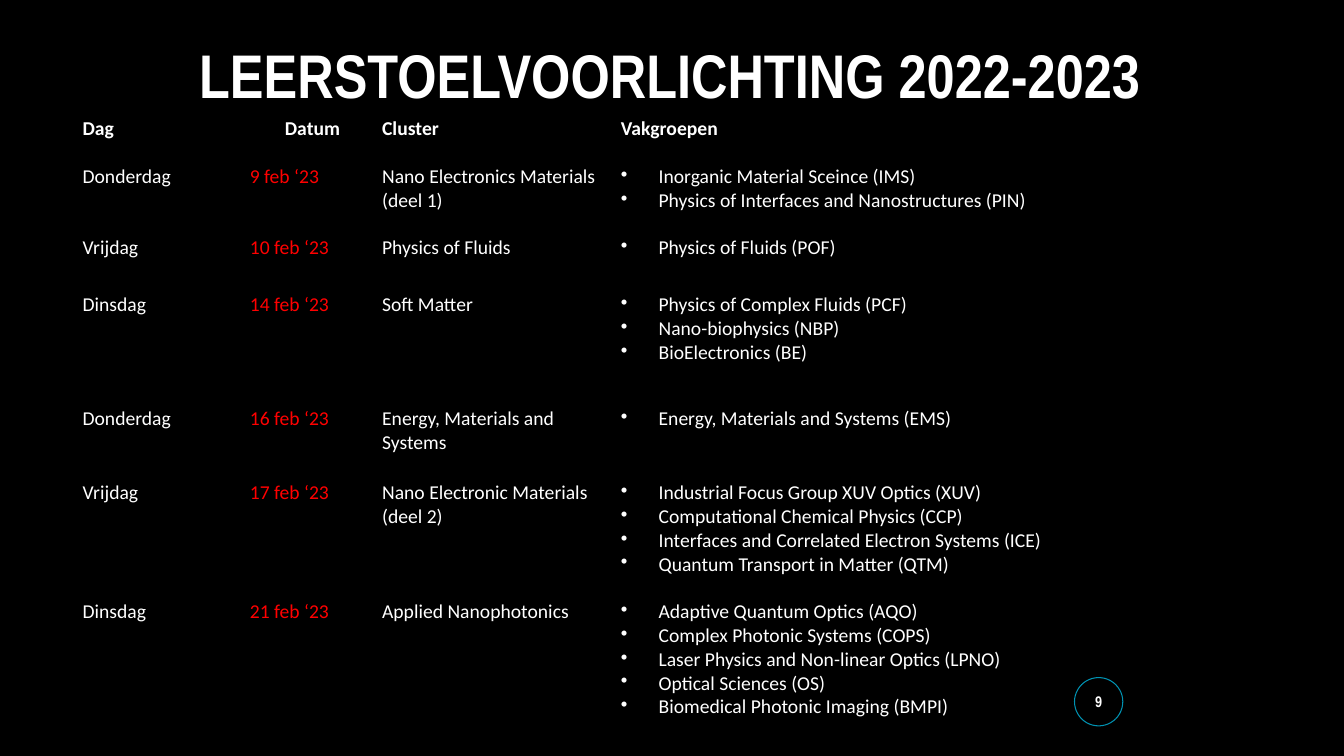
from lxml import etree
from pptx import Presentation
from pptx.dml.color import RGBColor
from pptx.enum import shapes, text
from pptx.oxml import ns
from pptx.util import Pt

HUES = {"black": "000000", "white": "FFFFFF", "red": "FF0000", "teal": "0093B3"}


def hue(name):
    return RGBColor.from_string(HUES[name])


def write(para, words, font, size, color="white", bold=False):
    """Add one run; a vertical tab in the words becomes a line break."""
    for i, part in enumerate(words.split("\v")):
        if i:
            para.add_line_break()
        run = para.add_run()
        run.text = part
        run.font.name = font
        run.font.size = Pt(size)
        run.font.bold = bold
        run.font.color.rgb = hue(color)


deck = Presentation()
deck.slide_width, deck.slide_height = Pt(960), Pt(540)
slide = deck.slides.add_slide(deck.slide_layouts[6])
slide.background.fill.solid()
slide.background.fill.fore_color.rgb = hue("black")

# Page number in a circle
badge = slide.shapes.add_shape(
    shapes.MSO_SHAPE.OVAL, Pt(767.5), Pt(484), Pt(34.5), Pt(34.5))
badge.shadow.inherit = False
badge.fill.solid()
badge.fill.fore_color.rgb = hue("black")
badge.line.color.rgb = hue("teal")
badge.line.width = Pt(0.75)
frame = badge.text_frame
frame.margin_left = frame.margin_right = frame.margin_top = frame.margin_bottom = 0
frame.vertical_anchor = text.MSO_ANCHOR.MIDDLE
frame.paragraphs[0].alignment = text.PP_ALIGN.CENTER
write(frame.paragraphs[0], "9", "Arial Narrow", 11, bold=True)

# Schedule: day, date, cluster lines, groups
rows = [
    ("Dag", "Datum", ["Cluster"], ["Vakgroepen"]),
    ("Donderdag", "9 feb ‘23", ["Nano Electronics Materials", "(deel 1)"],
     ["Inorganic Material Sceince (IMS)",
      "Physics of Interfaces and Nanostructures (PIN)"]),
    ("Vrijdag", "10 feb ‘23", ["Physics of Fluids"], ["Physics of Fluids (POF)"]),
    ("Dinsdag", "14 feb ‘23", ["Soft Matter"],
     ["Physics of Complex Fluids (PCF)", "Nano-biophysics (NBP)",
      "BioElectronics (BE)"]),
    ("Donderdag", "16 feb ‘23", ["Energy, Materials and Systems"],
     ["Energy, Materials and Systems (EMS)"]),
    ("Vrijdag", "17 feb ‘23", ["Nano Electronic Materials \v(deel 2)"],
     ["Industrial Focus Group XUV Optics (XUV)",
      "Computational Chemical Physics (CCP)",
      "Interfaces and Correlated Electron Systems (ICE)",
      "Quantum Transport in Matter (QTM)"]),
    ("Dinsdag", "21 feb ‘23", ["Applied Nanophotonics"],
     ["Adaptive Quantum Optics (AQO)", "Complex Photonic Systems (COPS)",
      "Laser Physics and Non-linear Optics (LPNO)", "Optical Sciences (OS)",
      "Biomedical Photonic Imaging (BMPI)"]),
]
wide = [119.5, 94.5, 170.5, 427.5]
high = [34.5, 50.5, 41, 81.5, 52.5, 85, 94.5]
grid = slide.shapes.add_table(
    len(rows), len(wide), Pt(54), Pt(82.8), Pt(sum(wide)), Pt(sum(high))).table
grid.first_row = grid.horz_banding = False
for col, size in zip(grid.columns, wide):
    col.width = Pt(size)

for r, (day, date, cluster, groups) in enumerate(rows):
    grid.rows[r].height = Pt(high[r])
    for c, lines in enumerate([[day], [date], cluster, groups]):
        cell = grid.cell(r, c)
        cell.margin_left = cell.margin_right = Pt(5)
        cell.margin_top, cell.margin_bottom = Pt(0.7), 0
        cell.fill.background()

        # Black borders
        props = cell._tc.get_or_add_tcPr()
        for i, side in enumerate(["lnL", "lnR", "lnT", "lnB"]):
            edge = etree.Element(ns.qn("a:" + side), w=str(Pt(1)))
            paint = etree.SubElement(edge, ns.qn("a:solidFill"))
            etree.SubElement(paint, ns.qn("a:srgbClr"), val=HUES["black"])
            props.insert(i, edge)

        for i, line in enumerate(lines):
            body = cell.text_frame
            para = body.add_paragraph() if i else body.paragraphs[0]
            form = para._p.get_or_add_pPr()
            if r == 0 and c == 1:
                form.set("marL", str(Pt(25)))
            if r and c == 3:
                form.set("marL", str(Pt(27)))
                form.set("indent", str(Pt(-27)))
                etree.SubElement(form, ns.qn("a:buChar"), char="•")
                tabs = etree.SubElement(form, ns.qn("a:tabLst"))
                etree.SubElement(tabs, ns.qn("a:tab"), pos=str(Pt(36)), algn="l")
            color = "red" if r and c == 1 else "white"
            write(para, line, "Calibri", 14, color, bold=r == 0)

# Title
title = slide.shapes.add_textbox(Pt(54), Pt(22.3), Pt(849.6), Pt(60.5)).text_frame
title.word_wrap = True
title.vertical_anchor = text.MSO_ANCHOR.BOTTOM
title.paragraphs[0].alignment = text.PP_ALIGN.CENTER
write(title.paragraphs[0], "LEERSTOELVOORLICHTING 2022-2023", "Arial Narrow", 44, bold=True)

deck.save("out.pptx")
